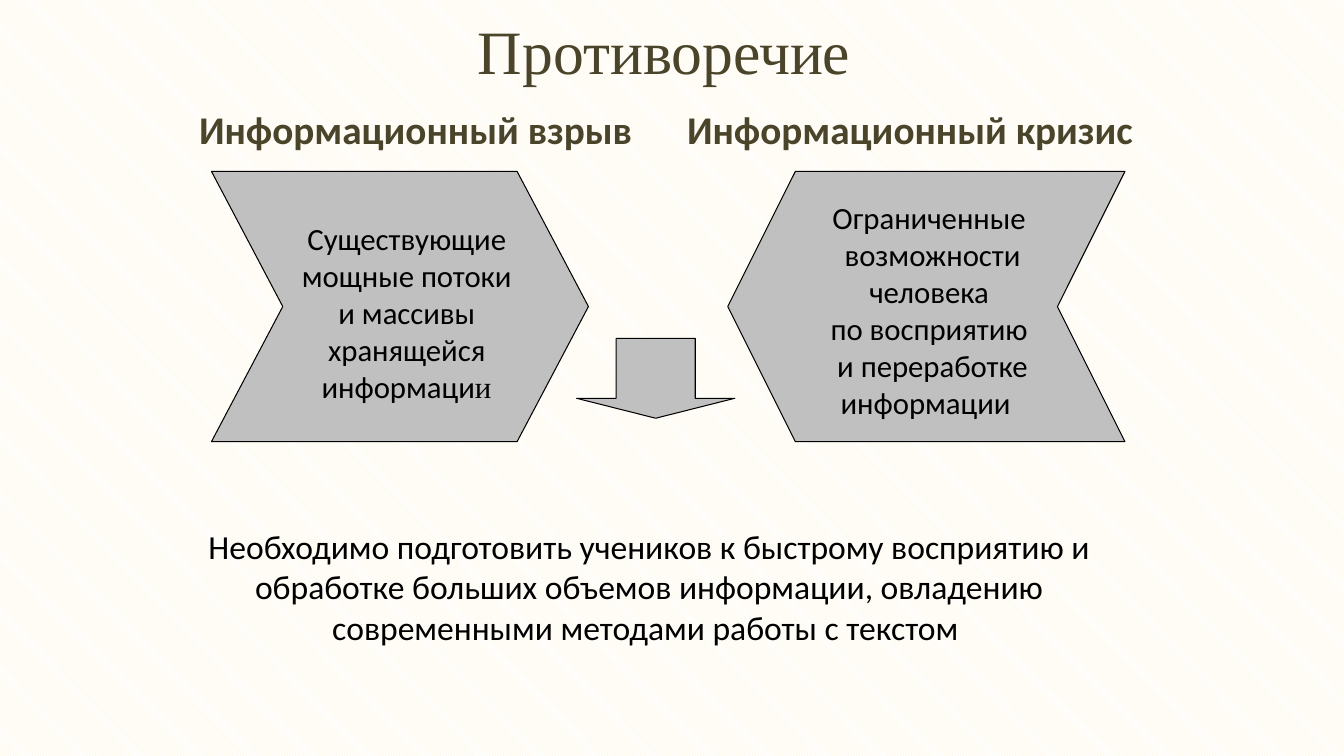
from dataclasses import dataclass

from lxml.etree import Element
from pptx import Presentation
from pptx.dml.color import RGBColor
from pptx.enum.dml import MSO_PATTERN
from pptx.enum.shapes import MSO_SHAPE
from pptx.enum.text import MSO_ANCHOR, PP_ALIGN
from pptx.oxml.ns import qn
from pptx.slide import Slide
from pptx.text.text import TextFrame
from pptx.util import Cm, Pt

OLIVE = RGBColor(0x4A, 0x45, 0x2A)
BLACK = RGBColor(0x00, 0x00, 0x00)
SILVER = RGBColor(0xC0, 0xC0, 0xC0)
CREAM = RGBColor(0xFF, 0xF2, 0xCC)
WHITE = RGBColor(0xFF, 0xFF, 0xFF)

SERIF = "Times New Roman"
TITLE_FORMAT = {"name": SERIF, "size": Pt(44)}
HEADING_FORMAT = {"name": "Calibri", "size": Pt(28), "bold": True}
CONCLUSION_FORMAT = {"name": "Calibri", "size": Pt(24)}
ARROW_TEXT_FORMAT = {"name": "Calibri", "size": Pt(22)}


@dataclass(frozen=True)
class Area:
    """Left, top, width and height in centimetres."""
    left: float
    top: float
    width: float
    height: float

    def lengths(self) -> tuple[Cm, Cm, Cm, Cm]:
        return Cm(self.left), Cm(self.top), Cm(self.width), Cm(self.height)


@dataclass(frozen=True)
class Arrow:
    preset: MSO_SHAPE
    area: Area
    adjustments: tuple[float, ...]
    rotation: int = 0


@dataclass(frozen=True)
class Label:
    area: Area
    lines: tuple[str, ...]
    text_format: dict
    color: RGBColor = BLACK
    anchor: MSO_ANCHOR = MSO_ANCHOR.TOP
    serif_ending: str = ""


ARROWS = (
    Arrow(MSO_SHAPE.CHEVRON, Area(18.34, 4.32, 10.01, 6.81), (0.25,), 180),
    Arrow(MSO_SHAPE.CHEVRON, Area(5.33, 4.32, 9.5, 6.81), (0.264,)),
    Arrow(MSO_SHAPE.DOWN_ARROW, Area(14.53, 8.53, 3.99, 2.01), (0.5, 0.25)),
)

LABELS = (
    Label(Area(5.74, 0, 22, 2.49), ("Противоречие",), TITLE_FORMAT, OLIVE, MSO_ANCHOR.MIDDLE),
    Label(Area(18.92, 4.88, 8.99, 6.15),
          ("Ограниченные", " возможности", " человека ", "по восприятию",
           " и переработке", "информации "), ARROW_TEXT_FORMAT),
    Label(Area(7.14, 5.41, 6.4, 4.45),
          ("Существующие ", "мощные потоки ", "и массивы ", "хранящейся ", "информаци"),
          ARROW_TEXT_FORMAT, serif_ending="и "),
    Label(Area(4.98, 13.13, 22.76, 4.01),
          ("Необходимо подготовить учеников к быстрому восприятию и обработке больших "
           "объемов информации, овладению современными методами работы с текстом ",),
          CONCLUSION_FORMAT),
)

HEADINGS = ("Информационный взрыв", "Информационный кризис")
HEADINGS_AREA = Area(4.24, 1.19, 24.92, 2.69)
CELL_FORMAT = {"margin_left": Cm(0.1), "margin_right": Cm(0.1),
               "margin_top": Cm(1.85), "margin_bottom": Cm(0.1)}


def add_span(para, text: str, text_format: dict, color: RGBColor) -> None:
    span = para.add_run()
    span.text = text
    for name, value in text_format.items():
        setattr(span.font, name, value)
    span.font.color.rgb = color


def write_lines(frame: TextFrame, lines: tuple[str, ...], text_format: dict,
                color: RGBColor) -> None:
    for index, line in enumerate(lines):
        para = frame.add_paragraph() if index else frame.paragraphs[0]
        para.alignment = PP_ALIGN.CENTER
        add_span(para, line, text_format, color)


def add_label(page: Slide, label: Label) -> None:
    frame = page.shapes.add_textbox(*label.area.lengths()).text_frame
    frame.word_wrap = True
    frame.vertical_anchor = label.anchor
    write_lines(frame, label.lines, label.text_format, label.color)
    if label.serif_ending:
        add_span(frame.paragraphs[-1], label.serif_ending,
                 label.text_format | {"name": SERIF}, label.color)


def add_arrow(page: Slide, arrow: Arrow) -> None:
    shape = page.shapes.add_shape(arrow.preset, *arrow.area.lengths())
    for index, value in enumerate(arrow.adjustments):
        shape.adjustments[index] = value
    shape.rotation = arrow.rotation
    shape.shadow.inherit = False
    shape.fill.solid()
    shape.fill.fore_color.rgb = SILVER
    shape.line.color.rgb = BLACK
    shape.line.width = Pt(0.75)


def add_headings(page: Slide) -> None:
    table = page.shapes.add_table(1, len(HEADINGS), *HEADINGS_AREA.lengths()).table
    table.first_row = table.horz_banding = False
    for cell, heading in zip(table.iter_cells(), HEADINGS):
        for name, value in CELL_FORMAT.items():
            setattr(cell, name, value)
        cell.fill.background()
        write_lines(cell.text_frame, (heading,), HEADING_FORMAT, OLIVE)
        cell.text_frame.paragraphs[0].line_spacing = 0.61
        # Borders are switched off and must precede the fill
        properties = cell._tc.get_or_add_tcPr()
        for index, side in enumerate(("a:lnL", "a:lnR", "a:lnT", "a:lnB")):
            border = Element(qn(side))
            border.append(Element(qn("a:noFill")))
            properties.insert(index, border)


def main() -> None:
    deck = Presentation()
    deck.slide_width, deck.slide_height = Cm(33.87), Cm(19.05)
    page = deck.slides.add_slide(deck.slide_layouts[6])

    # Striped background
    background = page.background.fill
    background.patterned()
    background.pattern = MSO_PATTERN.LIGHT_DOWNWARD_DIAGONAL
    background.fore_color.rgb = CREAM
    background.back_color.rgb = WHITE

    # Headings, arrows, then the text over them
    add_headings(page)
    for arrow in ARROWS:
        add_arrow(page, arrow)
    for label in LABELS:
        add_label(page, label)

    deck.save("out.pptx")


if __name__ == "__main__":
    main()
